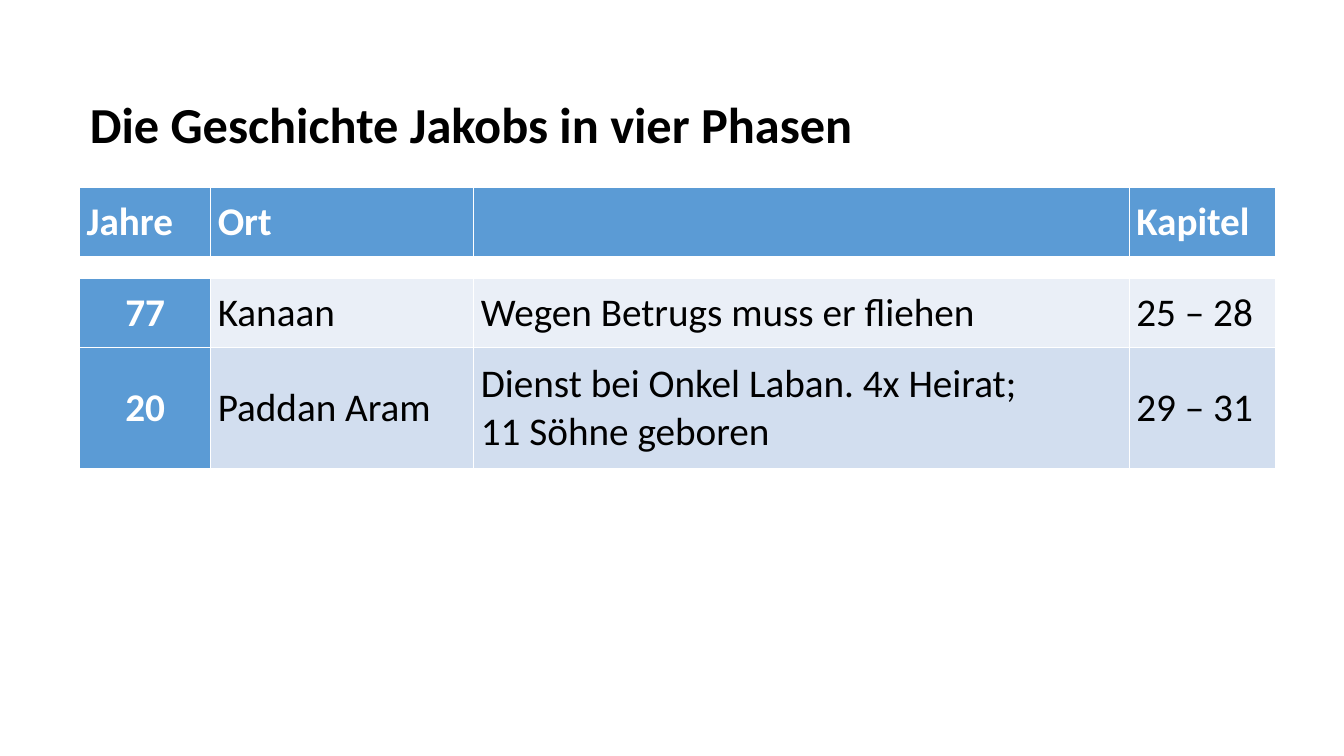
from lxml import etree
from pptx import Presentation
from pptx.dml.color import RGBColor
from pptx.enum.text import MSO_ANCHOR, MSO_AUTO_SIZE, PP_ALIGN
from pptx.oxml.ns import qn
from pptx.util import Emu, Pt

PX = 9144
LEFT, CENTER = PP_ALIGN.LEFT, PP_ALIGN.CENTER
MIDDLE = MSO_ANCHOR.MIDDLE
NO_AUTOFIT = MSO_AUTO_SIZE.NONE
FONT = "Calibri"
BLACK, WHITE, BLUE = "000000", "FFFFFF", "5B9BD5"
TITLE_ONLY = 5

COLUMN_WIDTHS = [130, 261, 650, 145]
ROWS = [
    (68, BLUE, "LTR", ["Jahre", "Ort", "", "Kapitel"]),
    (23, WHITE, "", ["", "", "", ""]),
    (68, "EAEFF7", "LRB", ["77", "Kanaan", "Wegen Betrugs muss er fliehen", "25 – 28"]),
    (120, "D2DEEF", "LRTB", [
        "20", "Paddan Aram",
        "Dienst bei Onkel Laban. 4x Heirat;\n11 Söhne geboren", "29 – 31"]),
]


def px(length):
    """Turn pixels into EMU."""
    return Emu(length * PX)


def color(value):
    """Turn a hex string into a colour."""
    return RGBColor.from_string(value)


def format_text(text_frame, size, text_color, bold, alignment):
    """Format every run of a text frame."""
    for paragraph in text_frame.paragraphs:
        paragraph.alignment = alignment
        for run in paragraph.runs:
            run.font.name = FONT
            run.font.size = Pt(size)
            run.font.bold = bold
            run.font.color.rgb = color(text_color)


def set_borders(cell, sides):
    """Draw white lines on the given sides and none on the others."""
    properties = cell._tc.get_or_add_tcPr()
    for side in "LRTB":
        line = etree.SubElement(properties, qn(f"a:ln{side}"), w=str(Pt(1)))
        if side in sides:
            fill = etree.SubElement(line, qn("a:solidFill"))
            etree.SubElement(fill, qn("a:srgbClr"), val=WHITE)
        else:
            etree.SubElement(line, qn("a:noFill"))


def fill_cell(cell, text, background, sides, is_heading, alignment):
    """Write and style one table cell."""
    cell.margin_left = cell.margin_right = px(7)
    cell.margin_top = cell.margin_bottom = 0
    cell.vertical_anchor = MIDDLE
    set_borders(cell, sides)
    cell.fill.solid()
    cell.fill.fore_color.rgb = color(background)
    if text:
        cell.text_frame.text = text
        format_text(cell.text_frame, 28, WHITE if is_heading else BLACK,
                    is_heading, alignment)
    else:
        paragraph = cell.text_frame.paragraphs[0]
        etree.SubElement(paragraph._p, qn("a:endParaRPr"), sz="800")


def add_title(slide, text):
    """Place the slide title."""
    title = slide.shapes.title
    title.left, title.top, title.width, title.height = map(px, (79, 87, 785, 71))
    frame = title.text_frame
    frame.text = text
    frame.word_wrap = False
    frame.auto_size = NO_AUTOFIT
    frame.vertical_anchor = MIDDLE
    format_text(frame, 36, BLACK, True, LEFT)


def add_phase_table(slide):
    """Build the table of phases."""
    width = sum(COLUMN_WIDTHS)
    height = sum(row[0] for row in ROWS)
    table = slide.shapes.add_table(
        len(ROWS), len(COLUMN_WIDTHS), px(79), px(186), px(width), px(height)).table
    for column, column_width in zip(table.columns, COLUMN_WIDTHS):
        column.width = px(column_width)
    for row_index, (row_height, background, sides, texts) in enumerate(ROWS):
        table.rows[row_index].height = px(row_height)
        for column_index, text in enumerate(texts):
            is_year = row_index > 1 and column_index == 0
            fill_cell(table.cell(row_index, column_index), text,
                      BLUE if is_year else background, sides,
                      is_year or row_index == 0, CENTER if is_year else LEFT)


def main():
    """Create the presentation."""
    presentation = Presentation()
    presentation.slide_width, presentation.slide_height = px(1333), px(750)
    slide = presentation.slides.add_slide(presentation.slide_layouts[TITLE_ONLY])
    add_title(slide, "Die Geschichte Jakobs in vier Phasen")
    add_phase_table(slide)
    presentation.save("out.pptx")


if __name__ == "__main__":
    main()
